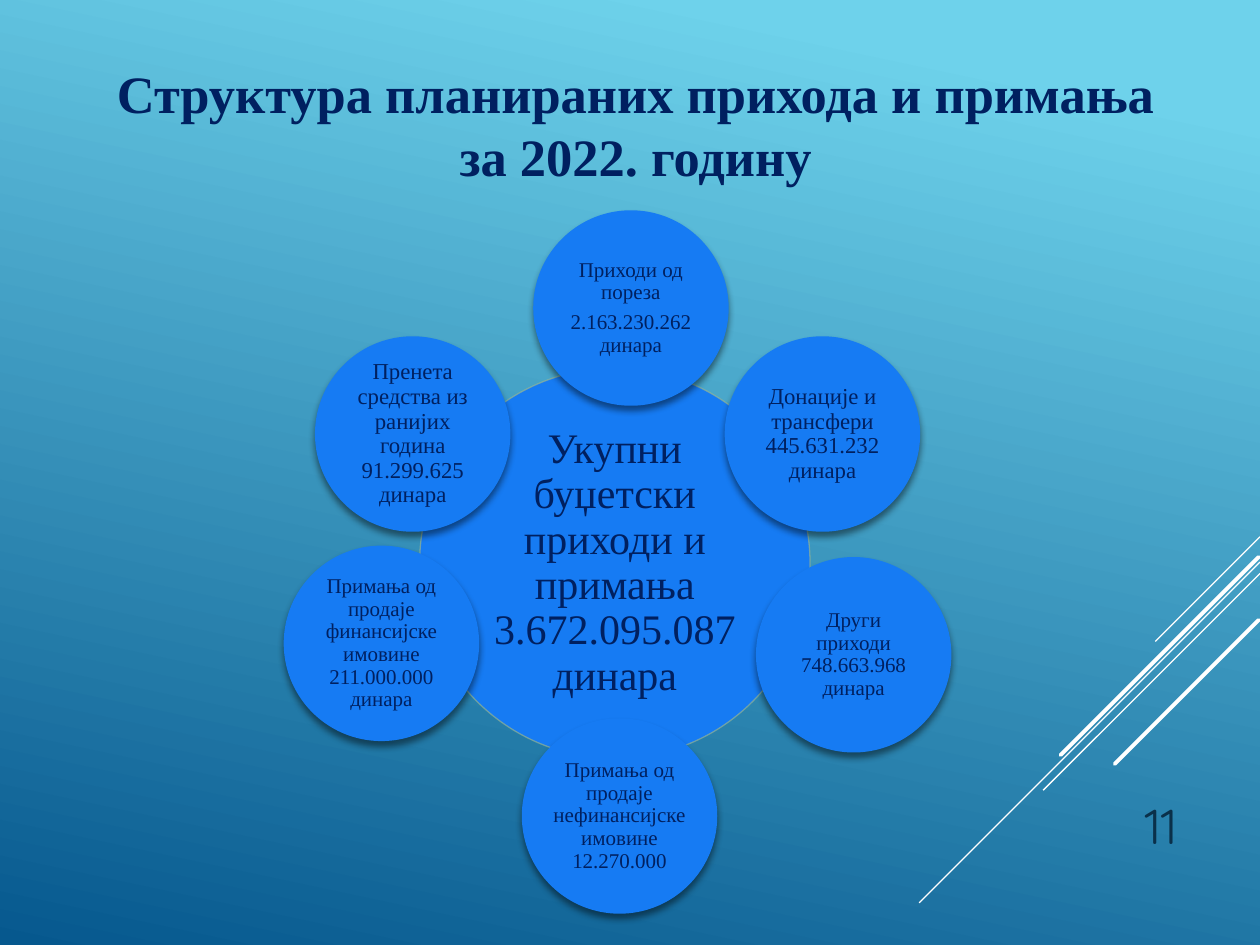
from dataclasses import dataclass

from lxml import etree
from pptx import Presentation
from pptx import util as u
from pptx.dml.color import RGBColor
from pptx.enum import shapes, text
from pptx.oxml import ns

NAVY = "002060"
BLUE = "167BF3"
WHITE = "FFFFFF"
SERIF = "Times New Roman"


@dataclass
class Circle:
    left: float
    top: float
    diameter: float
    size: int
    paragraphs: tuple[str, ...]


@dataclass
class Diagonal:
    right: float
    top: float
    run: float
    weight: float


TOTAL = Circle(8.46, 7.42, 7.87, 24, ("Укупни буџетски приходи и примања 3.672.095.087 динара",))
SOURCES = [
    Circle(10.75, 4.24, 3.94, 12, ("Приходи од пореза", "2.163.230.262 динара")),
    Circle(14.61, 6.78, 3.94, 13, ("Донације и трансфери 445.631.232 динара",)),
    Circle(15.24, 11.23, 3.94, 12, ("Други приходи 748.663.968 динара",)),
    Circle(10.52, 14.48, 3.94, 12, ("Примања од продаје нефинансијске имовине 12.270.000",)),
    Circle(5.72, 11, 3.94, 12, ("Примања од продаје финансијске имовине 211.000.000 динара",)),
    Circle(6.35, 6.78, 3.94, 13, ("Пренета средства из ранијих година 91.299.625 динара",)),
]
DIAGONALS = [
    Diagonal(25.4, 10.82, 2.11, 0.75),
    Diagonal(25.4, 11.33, 6.87, 0.75),
    Diagonal(25.4, 11.56, 4.37, 0.75),
    Diagonal(25.37, 11.23, 3.99, 2.25),
    Diagonal(25.37, 12.5, 2.9, 2.25),
]


def color(value: str) -> RGBColor:
    return RGBColor.from_string(value)


def add_element(parent, tag: str, **attributes: str):
    element = etree.SubElement(parent, ns.qn(tag))
    for name, value in attributes.items():
        element.set(name, value)
    return element


def write(frame, *paragraphs: str, size: float, font: str = SERIF, fill: str = NAVY,
          bold: bool = False, align=text.PP_ALIGN.CENTER, anchor=text.MSO_ANCHOR.MIDDLE,
          spacing: float = 1.0, after: float = 0, inset: float | None = None) -> None:
    frame.word_wrap = True
    frame.auto_size = text.MSO_AUTO_SIZE.NONE
    frame.vertical_anchor = anchor
    if inset is not None:
        frame.margin_left = frame.margin_right = u.Cm(inset)
        frame.margin_top = frame.margin_bottom = u.Cm(inset)
    for index, content in enumerate(paragraphs):
        paragraph = frame.add_paragraph() if index else frame.paragraphs[0]
        paragraph.alignment = align
        paragraph.line_spacing = spacing
        paragraph.space_before = u.Pt(0)
        paragraph.space_after = u.Pt(after)
        run = paragraph.add_run()
        run.text = content
        run.font.name = font
        run.font.size = u.Pt(size)
        run.font.bold = bold
        run.font.color.rgb = color(fill)


def draw_background(slide) -> None:
    fill = slide.background.fill
    fill.gradient()
    fill.gradient_angle = 258
    for stop, position, value in zip(fill.gradient_stops, (0.1, 1), ("6ED2EB", "06588E")):
        stop.position = position
        stop.color.rgb = color(value)


def draw_diagonal(slide, diagonal: Diagonal) -> None:
    connector = slide.shapes.add_connector(
        shapes.MSO_CONNECTOR.STRAIGHT,
        u.Cm(diagonal.right), u.Cm(diagonal.top),
        u.Cm(diagonal.right - diagonal.run), u.Cm(diagonal.top + diagonal.run))
    connector.line.color.rgb = color(WHITE)
    connector.line.width = u.Pt(diagonal.weight)
    if diagonal.weight > 1:
        connector.line._get_or_add_ln().set("cap", "rnd")
    add_element(connector._element.spPr, "a:effectLst")


def draw_circle(slide, circle: Circle):
    shape = slide.shapes.add_shape(
        shapes.MSO_SHAPE.OVAL, u.Cm(circle.left), u.Cm(circle.top),
        u.Cm(circle.diameter), u.Cm(circle.diameter))
    shape.shadow.inherit = False
    shape.fill.solid()
    shape.fill.fore_color.rgb = color(BLUE)
    shape.line.fill.background()
    write(shape.text_frame, *circle.paragraphs, size=circle.size,
          spacing=0.9, after=circle.size * 0.35, inset=0.04)
    return shape


def outline(shape) -> None:
    shape.line.color.rgb = color("A4BB8B")
    shape.line.width = u.Pt(0.75)
    value = shape._element.spPr.find(".//" + ns.qn("a:ln")).find(".//" + ns.qn("a:srgbClr"))
    add_element(value, "a:alpha", val="60000")


def cast_shadow(shape) -> None:
    effects = shape._element.spPr.find(ns.qn("a:effectLst"))
    shadow = add_element(effects, "a:outerShdw", blurRad=str(u.Pt(4)), dist=str(u.Pt(3)),
                         dir="5400000", rotWithShape="0")
    value = add_element(shadow, "a:srgbClr", val="000000")
    add_element(value, "a:alpha", val="46000")


def main() -> None:
    presentation = Presentation()
    presentation.slide_width = u.Cm(25.4)
    presentation.slide_height = u.Cm(19.05)
    slide = presentation.slides.add_slide(presentation.slide_layouts[5])
    draw_background(slide)

    for diagonal in DIAGONALS:
        draw_diagonal(slide, diagonal)

    number = slide.shapes.add_textbox(u.Cm(21.59), u.Cm(15.49), u.Cm(2.39), u.Cm(1.85))
    write(number.text_frame, "11", size=28, font="Quicksand", fill="0A304A",
          align=text.PP_ALIGN.RIGHT, anchor=text.MSO_ANCHOR.BOTTOM)

    outline(draw_circle(slide, TOTAL))
    for source in SOURCES:
        cast_shadow(draw_circle(slide, source))

    title = slide.shapes.title
    title.left, title.top = u.Cm(1.7), u.Cm(1.07)
    title.width, title.height = u.Cm(22.23), u.Cm(2.82)
    write(title.text_frame, "Структура планираних прихода и примања за 2022. годину",
          size=30, bold=True, anchor=text.MSO_ANCHOR.BOTTOM)

    presentation.save("out.pptx")


if __name__ == "__main__":
    main()
